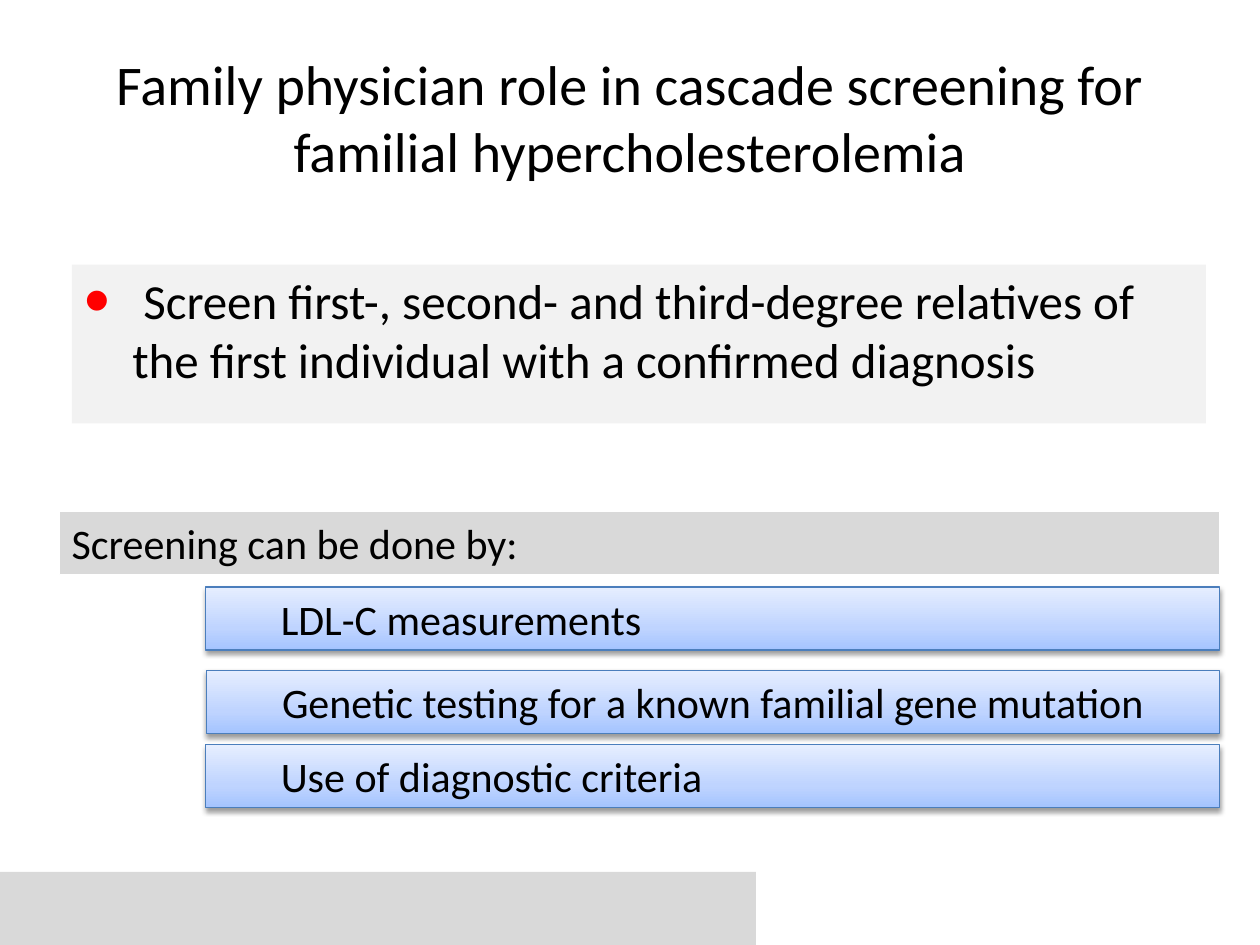
from lxml import etree
from pptx import Presentation
from pptx.dml.color import RGBColor
from pptx.enum.shapes import MSO_SHAPE
from pptx.enum.text import MSO_ANCHOR, MSO_AUTO_SIZE, PP_ALIGN
from pptx.oxml import parse_xml
from pptx.oxml.ns import nsdecls, qn
from pptx.util import Inches, Pt

COLORS = {
    "text": "000000",
    "white": "FFFFFF",
    "panel": "F2F2F2",
    "band": "D9D9D9",
    "bullet": "FF0000",
    "method_line": "4B7EBC",
    "method_bottom": "A4C4FF",
    "method_middle": "BFD4FF",
    "method_top": "E6EEFF",
}
METHODS = [
    ("LDL-C measurements", 1.63, 4.66),
    ("Genetic testing for a known familial gene mutation", 1.64, 5.32),
    ("Use of diagnostic criteria", 1.63, 5.91),
]
METHODS_RIGHT = 9.68


def rgb(name):
    return RGBColor.from_string(COLORS[name])


def place(shape, box):
    shape.left, shape.top, shape.width, shape.height = map(Inches, box)


def fill_solid(shape, color):
    shape.fill.solid()
    shape.fill.fore_color.rgb = rgb(color)


def write(shape, text, size, align, anchor):
    frame = shape.text_frame
    frame.text = text
    frame.word_wrap = True
    frame.auto_size = MSO_AUTO_SIZE.NONE
    frame.vertical_anchor = anchor
    paragraph = frame.paragraphs[0]
    paragraph.alignment = align
    paragraph.space_before = Pt(0)
    font = paragraph.runs[0].font
    font.name = "Calibri"
    font.size = Pt(size)
    font.color.rgb = rgb("text")
    return paragraph


def set_indent(paragraph, margin, indent):
    properties = paragraph._p.get_or_add_pPr()
    properties.set("marL", str(Inches(margin)))
    properties.set("indent", str(Inches(indent)))
    return properties


def add_rectangle(slide, box, line=None):
    rectangle = slide.shapes.add_shape(MSO_SHAPE.RECTANGLE, *map(Inches, box))
    rectangle.shadow.inherit = False
    if line:
        rectangle.line.color.rgb = rgb(line)
        rectangle.line.width = Pt(0.75)
    else:
        rectangle.line.fill.background()
    return rectangle


def add_footer_band(slide, box):
    fill_solid(add_rectangle(slide, box), "band")


def add_title(slide, box):
    title = slide.shapes.title
    place(title, box)
    write(title, "Family physician role in cascade screening for familial hypercholesterolemia",
          32, PP_ALIGN.CENTER, MSO_ANCHOR.MIDDLE)


def add_relatives_panel(slide, box):
    panel = slide.placeholders[1]
    place(panel, box)
    fill_solid(panel, "panel")
    paragraph = write(
        panel,
        " Screen first-, second- and third-degree relatives of the first individual "
        "with a confirmed diagnosis",
        28, PP_ALIGN.LEFT, MSO_ANCHOR.TOP)
    properties = set_indent(paragraph, 0.38, -0.38)
    bullet_color = etree.SubElement(properties, qn("a:buClr"))
    etree.SubElement(bullet_color, qn("a:srgbClr"), val=COLORS["bullet"])
    etree.SubElement(properties, qn("a:buSzPct"), val="150000")
    etree.SubElement(properties, qn("a:buFont"), typeface="Arial")
    etree.SubElement(properties, qn("a:buChar"), char="•")


def add_screening_heading(slide, box):
    heading = add_rectangle(slide, box, "white")
    fill_solid(heading, "band")
    write(heading, "Screening can be done by:", 24, PP_ALIGN.LEFT, MSO_ANCHOR.TOP)


def fill_method(method):
    method.fill.gradient()
    gradient = method._element.spPr.find(qn("a:gradFill"))
    stops = gradient.find(qn("a:gsLst"))
    stops.clear()
    for position, color in ((0, "method_bottom"), (35, "method_middle"), (100, "method_top")):
        stop = etree.SubElement(stops, qn("a:gs"), pos=str(position * 1000))
        etree.SubElement(stop, qn("a:srgbClr"), val=COLORS[color])
    method.fill.gradient_angle = 90


def add_shadow(method):
    method._element.spPr.find(qn("a:effectLst")).append(parse_xml(
        f'<a:outerShdw {nsdecls("a")} blurRad="{Pt(3.1)}" dist="{Pt(1.6)}" '
        f'dir="5400000" rotWithShape="0"><a:srgbClr val="{COLORS["text"]}">'
        '<a:alpha val="38000"/></a:srgbClr></a:outerShdw>'))


def add_method(slide, text, box):
    method = add_rectangle(slide, box, "method_line")
    fill_method(method)
    add_shadow(method)
    paragraph = write(method, text, 24, PP_ALIGN.LEFT, MSO_ANCHOR.MIDDLE)
    paragraph.level = 1
    set_indent(paragraph, 0.5, 0)


def main():
    presentation = Presentation()
    presentation.slide_width = Inches(10)
    presentation.slide_height = Inches(7.5)
    slide = presentation.slides.add_slide(presentation.slide_layouts[1])
    add_footer_band(slide, (0, 6.92, 6, 0.58))
    add_title(slide, (0.5, 0.3, 9, 1.25))
    add_relatives_panel(slide, (0.57, 2.1, 9, 1.26))
    add_screening_heading(slide, (0.47, 4.06, 9.21, 0.5))
    for text, left, top in METHODS:
        add_method(slide, text, (left, top, METHODS_RIGHT - left, 0.5))
    presentation.save("out.pptx")


if __name__ == "__main__":
    main()
